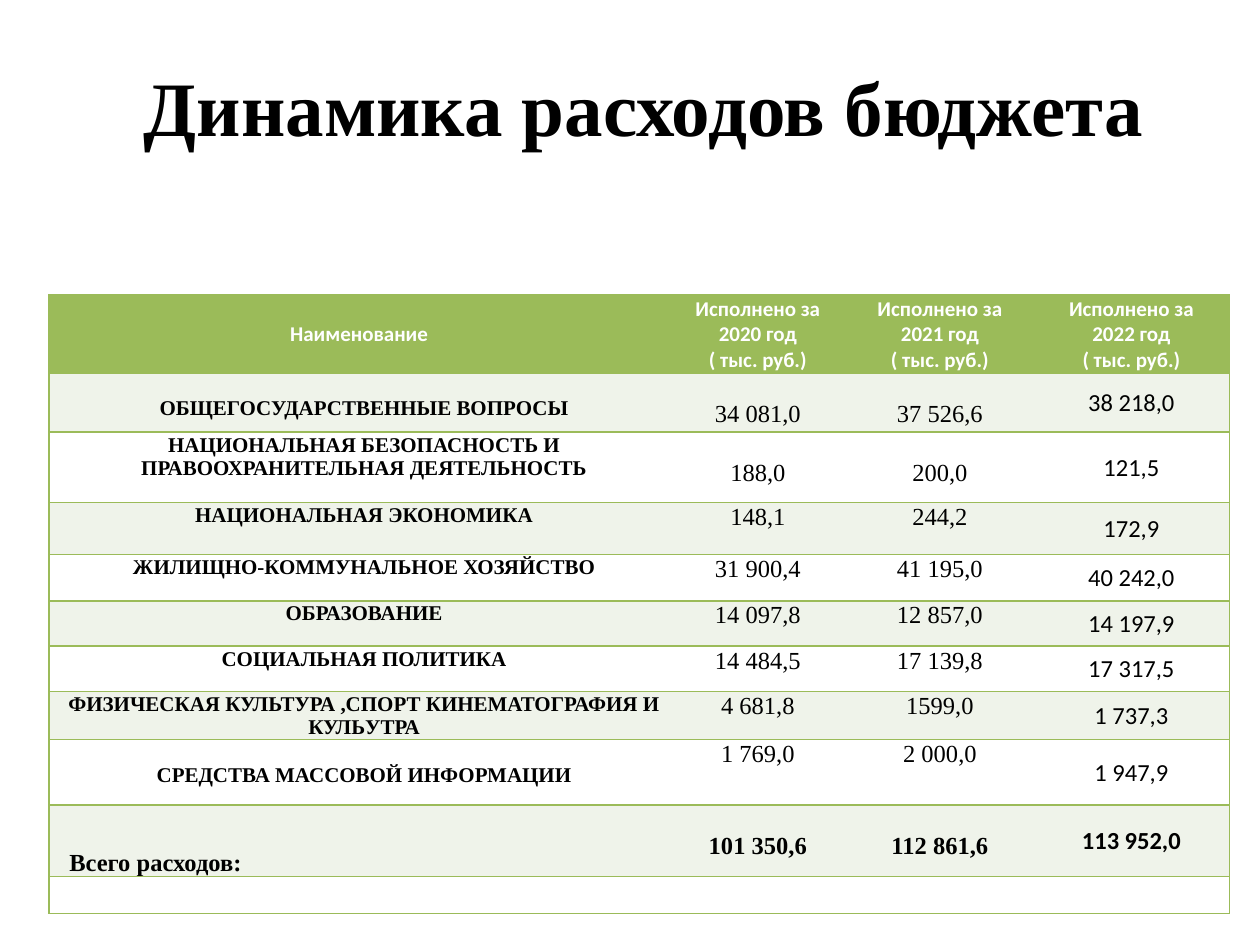
from lxml.etree import SubElement
from pptx import Presentation
from pptx.dml.color import RGBColor
from pptx.enum.text import MSO_ANCHOR as Anchor, PP_ALIGN as Align
from pptx.oxml.ns import qn
from pptx.util import Inches, Pt

GREEN = RGBColor(0x9B, 0xBB, 0x59)
PALE = RGBColor(0xEF, 0xF3, 0xEA)
WHITE = RGBColor(0xFF, 0xFF, 0xFF)
BLACK = RGBColor(0, 0, 0)
SERIF, SANS = "Times New Roman", "Calibri"
NO_STYLE = "{2D5ABB26-0587-4C30-8999-92F81FD0307C}"

COLUMN_WIDTHS = [4.92, 1.41, 1.48, 1.56]
HEADER = ["Наименование"] + [
    f"Исполнено за\n{year} год\n( тыс. руб.)" for year in (2020, 2021, 2022)]

# Row height, space above the name, space above the values, texts
EXPENSES = [
    (0.47, 0.18, 0.21, "ОБЩЕГОСУДАРСТВЕННЫЕ ВОПРОСЫ", "34 081,0", "37 526,6", "38 218,0"),
    (0.56, 0, 0.21, "НАЦИОНАЛЬНАЯ БЕЗОПАСНОСТЬ И\nПРАВООХРАНИТЕЛЬНАЯ ДЕЯТЕЛЬНОСТЬ",
     "188,0", "200,0", "121,5"),
    (0.41, 0, 0, "НАЦИОНАЛЬНАЯ ЭКОНОМИКА", "148,1", "244,2", "172,9"),
    (0.37, 0, 0, "ЖИЛИЩНО-КОММУНАЛЬНОЕ ХОЗЯЙСТВО", "31 900,4", "41 195,0", "40 242,0"),
    (0.36, 0, 0, "ОБРАЗОВАНИЕ", "14 097,8", "12 857,0", "14 197,9"),
    (0.36, 0, 0, "СОЦИАЛЬНАЯ ПОЛИТИКА", "14 484,5", "17 139,8", "17 317,5"),
    (0.38, 0, 0, "ФИЗИЧЕСКАЯ КУЛЬТУРА ,СПОРТ КИНЕМАТОГРАФИЯ И КУЛЬУТРА",
     "4 681,8", "1599,0", "1 737,3"),
    (0.52, 0.18, 0, "СРЕДСТВА МАССОВОЙ ИНФОРМАЦИИ", "1 769,0", "2 000,0", "1 947,9"),
]
TOTAL = (0.57, 0, 0.21, "Всего расходов:", "101 350,6", "112 861,6", "113 952,0")
HEADER_HEIGHT, FOOTER_HEIGHT = 0.62, 0.29


def style_text(frame, font, size, color, bold, align=Align.CENTER):
    for para in frame.paragraphs:
        para.alignment = align
        para.font.name, para.font.size = font, Pt(size)
        para.font.bold, para.font.color.rgb = bold, color


def add_border(cell, *sides):
    for side in sides:
        line = SubElement(cell._tc.get_or_add_tcPr(), qn(f"a:ln{side}"), w=str(Pt(1)))
        fill = SubElement(line, qn("a:solidFill"))
        SubElement(fill, qn("a:srgbClr"), val=str(GREEN))


def fill_cell(cell, text, fill, font, size, color=BLACK, bold=False,
              align=Align.CENTER, anchor=Anchor.TOP, above=0.0, indent=0.0):
    cell.text = text
    cell.margin_left, cell.margin_right = Inches(0.01 + indent), Inches(0.01)
    cell.margin_top, cell.margin_bottom = Inches(0.01 + above), 0
    cell.vertical_anchor = anchor
    style_text(cell.text_frame, font, size, color, bold, align)
    cell.fill.solid()
    cell.fill.fore_color.rgb = fill


def fill_row(cells, record, fill, is_total):
    _, name_above, value_above, name, *values = record
    if is_total:
        fill_cell(cells[0], name, fill, SERIF, 14, bold=True, align=Align.LEFT,
                  anchor=Anchor.BOTTOM, indent=0.15)
    else:
        fill_cell(cells[0], name, fill, SERIF, 12, bold=True,
                  above=name_above, indent=0.08)
    for cell, value in zip(cells[1:3], values):
        fill_cell(cell, value, fill, SERIF, 14, bold=is_total, above=value_above)
    fill_cell(cells[3], values[2], fill, SANS, 14, bold=is_total, anchor=Anchor.MIDDLE)


def add_title(page, left, top, width, height):
    box = page.shapes.add_textbox(left, top, width, height)
    frame = box.text_frame
    frame.word_wrap = True
    frame.vertical_anchor = Anchor.MIDDLE
    frame.text = "Динамика расходов бюджета"
    style_text(frame, SERIF, 44, BLACK, True)


def add_expense_table(page, left, top, width, height):
    records = EXPENSES + [TOTAL]
    heights = [HEADER_HEIGHT] + [record[0] for record in records] + [FOOTER_HEIGHT]
    table = page.shapes.add_table(
        len(heights), len(COLUMN_WIDTHS), left, top, width, height).table
    table._tbl.tblPr.find(qn("a:tableStyleId")).text = NO_STYLE
    for column, size in zip(table.columns, COLUMN_WIDTHS):
        column.width = Inches(size)
    for row, size in zip(table.rows, heights):
        row.height = Inches(size)

    # Outer frame and lines between rows
    grid = [list(row.cells) for row in table.rows]
    for cells in grid:
        for index, cell in enumerate(cells):
            outer = {0: "L", len(cells) - 1: "R"}.get(index, "")
            add_border(cell, *outer, "T", "B")

    # Header, banded rows and the merged last row
    for cell, text in zip(grid[0], HEADER):
        fill_cell(cell, text, GREEN, SANS, 12, WHITE, True, anchor=Anchor.MIDDLE)
    for index, record in enumerate(records):
        fill_row(grid[index + 1], record, WHITE if index % 2 else PALE, record is TOTAL)
    grid[-1][0].merge(grid[-1][-1])
    fill_cell(grid[-1][0], "", WHITE, SERIF, 12)
    add_border_right = grid[-1][0]._tc.get_or_add_tcPr().find(qn("a:lnL"))
    right_line = SubElement(add_border_right.getparent(), qn("a:lnR"), w=str(Pt(1)))
    SubElement(SubElement(right_line, qn("a:solidFill")), qn("a:srgbClr"), val=str(GREEN))
    add_border_right.addnext(right_line)


def main():
    deck = Presentation()
    deck.slide_width, deck.slide_height = Inches(10), Inches(7.5)
    page = deck.slides.add_slide(deck.slide_layouts[6])
    add_expense_table(page, Inches(0.39), Inches(2.34), Inches(9.37), Inches(4.91))
    add_title(page, Inches(0.61), Inches(0.21), Inches(9), Inches(1.25))
    deck.save("out.pptx")


if __name__ == "__main__":
    main()
